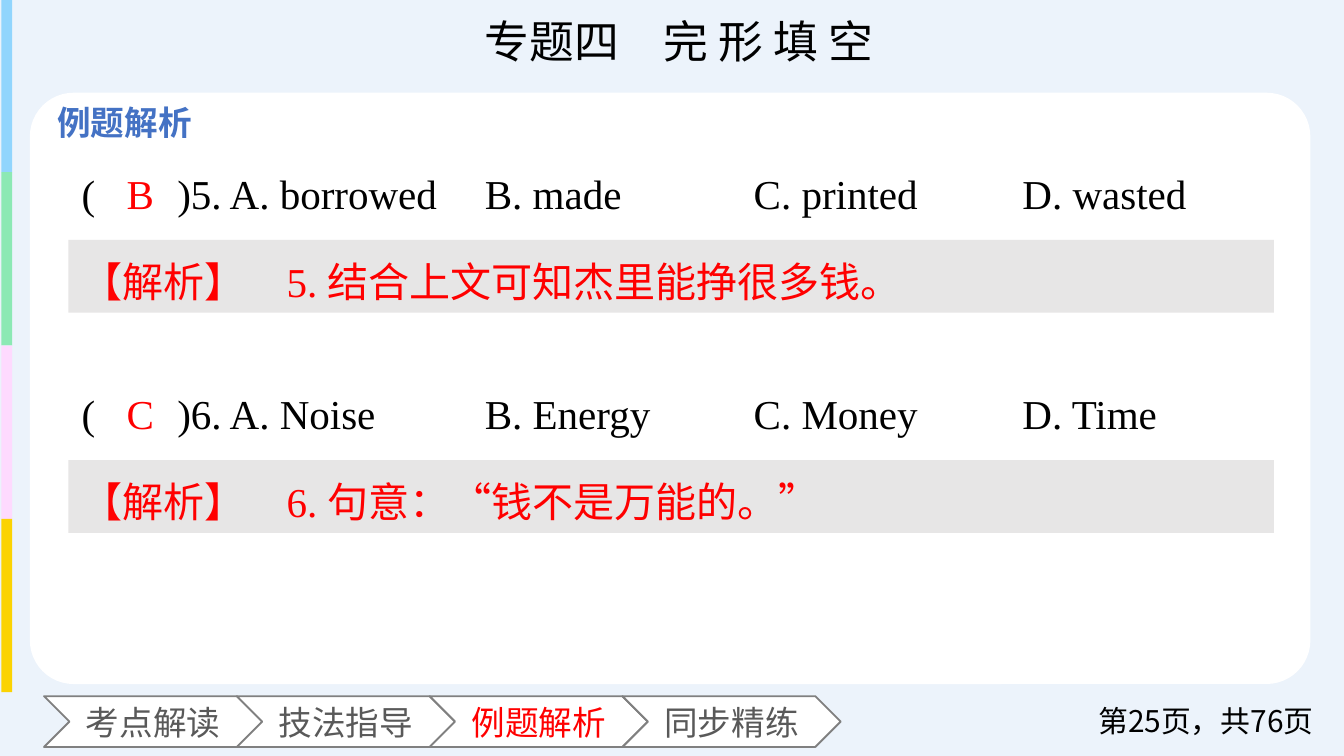
from dataclasses import dataclass

from lxml.etree import SubElement
from pptx import Presentation
from pptx.dml.color import RGBColor
from pptx.enum.shapes import MSO_SHAPE as Shape
from pptx.enum.text import MSO_ANCHOR as Anchor, PP_ALIGN as Align
from pptx.oxml.ns import qn
from pptx.util import Pt

TITLE = "专题四　完 形 填 空"
SECTION = "例题解析"
TABS = ["考点解读", "技法指导", "例题解析", "同步精练"]
PAGE_NUMBER = "第25页，共76页"
QUESTIONS = [
    {
        "answer": "B",
        "options": "(　　)5. A. borrowed \tB. made\tC. printed\tD. wasted",
        "analysis": "【解析】　5. 结合上文可知杰里能挣很多钱。",
    },
    {
        "answer": "C",
        "options": "(　　)6. A. Noise\tB. Energy\tC. Money\tD. Time",
        "analysis": "【解析】　6. 句意：“钱不是万能的。”",
    },
]


@dataclass(frozen=True)
class Theme:
    backdrop: str = "ECF3FB"
    panel: str = "FFFFFF"
    band: str = "E7E6E6"
    ink: str = "000000"
    accent: str = "FF0000"
    heading: str = "4472C4"
    tab_text: str = "595959"
    tab_line: str = "808080"
    stripes: tuple = ("91D5FD", "8CE9B4", "FEDAFE", "FBD302")
    serif: str = "Times New Roman"
    sans: str = "Noto Sans CJK SC"
    title_size: int = 24
    body_size: int = 22
    label_size: int = 18
    page_size: int = 16


THEME = Theme()
OPTION_STOPS = (216, 360, 504)


def add_shape(page, kind, bounds, fill, line=None):
    shape = page.shapes.add_shape(kind, *map(Pt, bounds))
    shape.shadow.inherit = False
    shape.fill.solid()
    shape.fill.fore_color.rgb = RGBColor.from_string(fill)
    if line:
        shape.line.color.rgb = RGBColor.from_string(line)
        shape.line.width = Pt(1)
    else:
        shape.line.fill.background()
    return shape


def write(box, text, size, color, font=THEME.sans, align=Align.LEFT,
          anchor=Anchor.TOP, spacing=None, bold=False, stops=(), wrap=True):
    frame = box.text_frame
    frame.word_wrap = wrap
    frame.vertical_anchor = anchor
    para = frame.paragraphs[0]
    para.alignment = align
    if spacing:
        para.line_spacing = spacing
    if stops:
        tab_list = SubElement(para._p.get_or_add_pPr(), qn("a:tabLst"))
        for stop in stops:
            SubElement(tab_list, qn("a:tab"), pos=str(Pt(stop)), algn="l")
    span = para.add_run()
    span.text = text
    span.font.size = Pt(size)
    span.font.bold = bold
    span.font.color.rgb = RGBColor.from_string(color)
    span.font.name = font
    # Chinese glyphs take the East Asian typeface
    SubElement(span.font._element, qn("a:ea"), typeface=THEME.sans)


def add_text(page, bounds, *args, **style):
    write(page.shapes.add_textbox(*map(Pt, bounds)), *args, **style)


def add_frame(page):
    page.background.fill.solid()
    page.background.fill.fore_color.rgb = RGBColor.from_string(THEME.backdrop)

    title = page.shapes.title
    title.left, title.top, title.width, title.height = map(Pt, (126.7, 3.6, 473.8, 36))
    write(title, TITLE, THEME.title_size, THEME.ink, THEME.serif, Align.CENTER)

    stripe_height = 92.9
    for index, color in enumerate(THEME.stripes):
        top = -0.7 + index * stripe_height
        add_shape(page, Shape.RECTANGLE, (0.7, top, 5.8, stripe_height), color)

    panel = add_shape(page, Shape.ROUNDED_RECTANGLE, (16, 49.7, 686, 316.8), THEME.panel)
    panel.adjustments[0] = 0.074
    add_text(page, (23.6, 51.1, 92.9, 28.8), SECTION, THEME.label_size,
             THEME.heading, bold=True, wrap=False)


def add_tabs(page):
    width, height = 116.9, 27.2
    step = width - height / 2  # each point fits the next notch
    for index, label in enumerate(TABS):
        tab = add_shape(page, Shape.CHEVRON, (23.6 + index * step, 373, width, height),
                        THEME.panel, THEME.tab_line)
        frame = tab.text_frame
        frame.margin_left = frame.margin_right = 0
        frame.margin_top = frame.margin_bottom = 0
        color = THEME.accent if label == SECTION else THEME.tab_text
        write(tab, label, THEME.label_size, color, align=Align.CENTER,
              anchor=Anchor.MIDDLE)


def add_question(page, question, top):
    left, width, height = 36.7, 645.8, 39
    size, serif = THEME.body_size, THEME.serif
    add_text(page, (left, top, width, height), question["options"], size,
             THEME.ink, serif, spacing=1.2, stops=OPTION_STOPS)
    band = add_shape(page, Shape.RECTANGLE, (left, top + 47.3, width, height), THEME.band)
    write(band, question["analysis"], size, THEME.accent, serif, spacing=1.2)
    add_text(page, (54.7, top + 5.3, 41, 33.8), question["answer"], size,
             THEME.accent, serif, Align.CENTER)


def main():
    deck = Presentation()
    deck.slide_width, deck.slide_height = Pt(720), Pt(405)
    page = deck.slides.add_slide(deck.slide_layouts[5])
    add_frame(page)
    add_tabs(page)
    add_text(page, (564.5, 375.1, 146.2, 21.6), PAGE_NUMBER, THEME.page_size,
             THEME.ink, align=Align.RIGHT, anchor=Anchor.MIDDLE)
    for index, question in enumerate(QUESTIONS):
        add_question(page, question, 81.2 + index * 118)
    deck.save("out.pptx")


if __name__ == "__main__":
    main()
